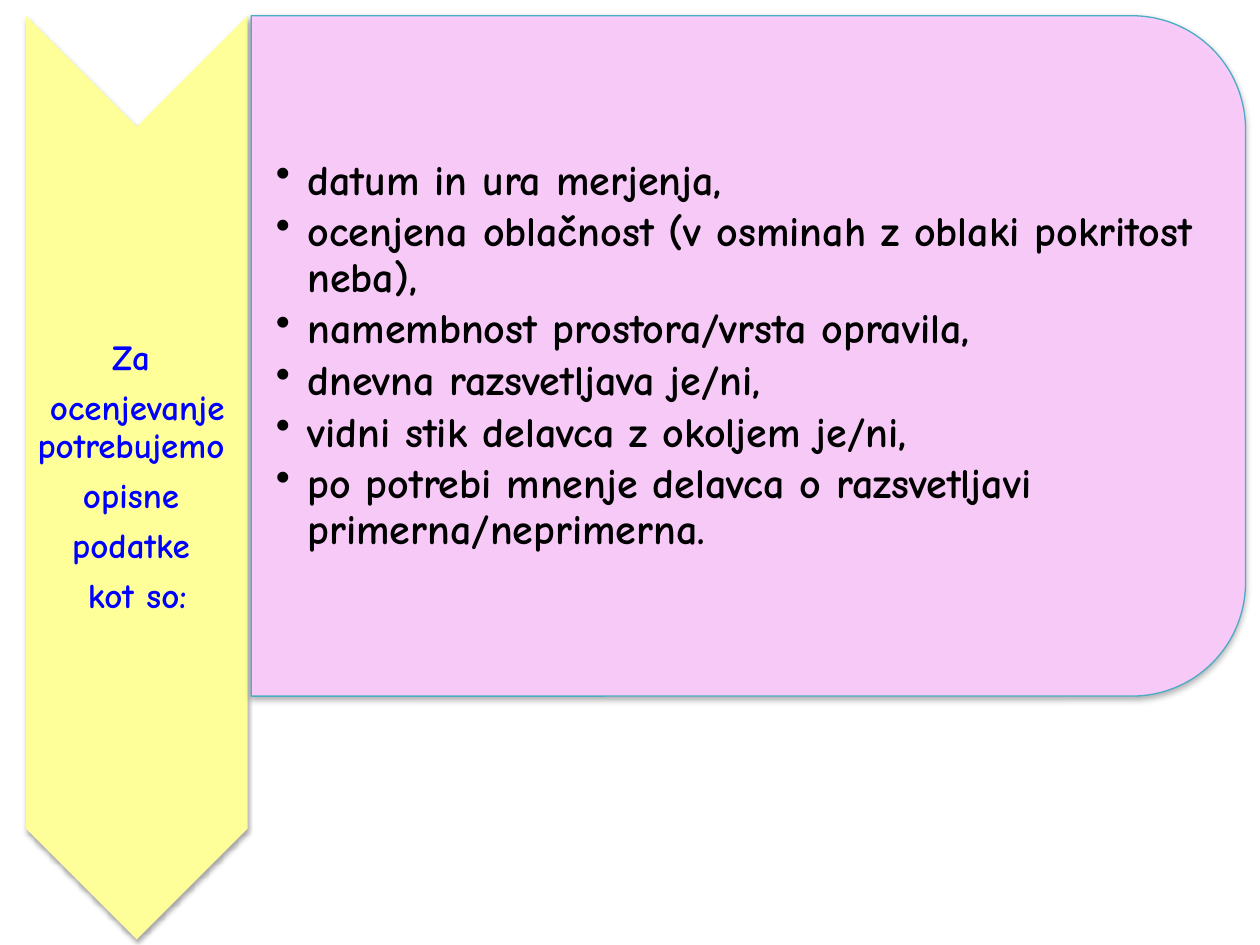
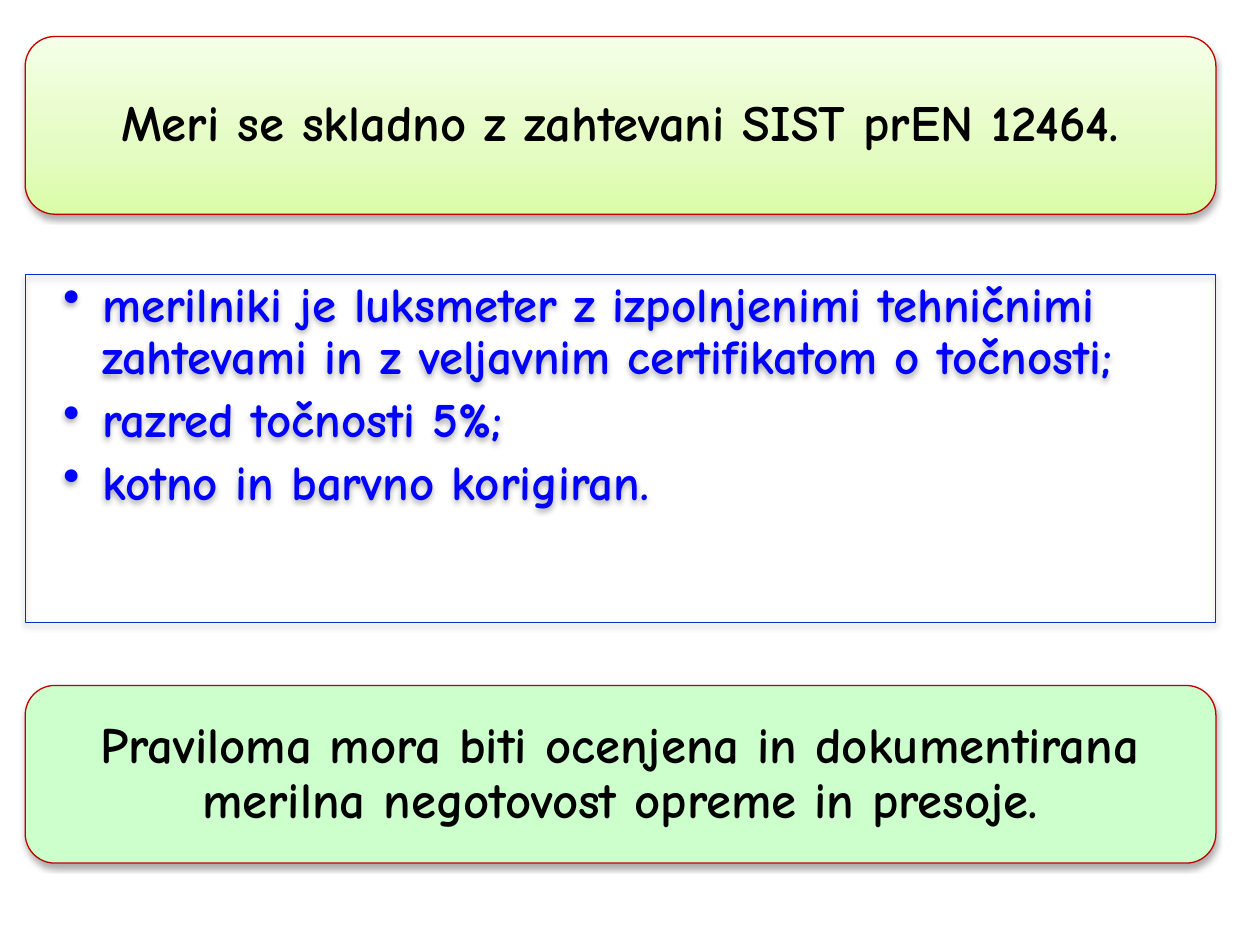
from pptx import Presentation, util as u
from pptx.dml.color import RGBColor
from pptx.enum import shapes, text
from pptx.oxml.ns import qn
from lxml import etree

PX = 9144  # 100 px to the inch
FONT = "Comic Neue"
HUES = {
    "black": "000000", "blue": "0000FF", "yellow": "FFFF99", "pink": "FFCCFF",
    "teal": "4BACC6", "navy": "0033CC", "red": "C00000", "mint": "CCFFCC",
}
LIME = [(0, "DAFDA7"), (35, "E4FCC2"), (100, "F5FFE7")]
KIND = shapes.MSO_SHAPE
MID, TOP = text.MSO_ANCHOR.MIDDLE, text.MSO_ANCHOR.TOP


def form(slide, kind, box, fill=None, line=None, turn=0, alpha=100, shade=(35, 3.1, 1.8)):
    """Draw a shape; a list as fill is an upward gradient, shade is alpha, blur, drop."""
    shape = slide.shapes.add_shape(kind, *[n * PX for n in box])
    shape.rotation = turn
    if fill is None:
        shape.fill.background()
    elif isinstance(fill, list):
        shape.fill.gradient()
        shape.fill.gradient_angle = 90
        stops = next(shape._element.spPr.iter(qn("a:gsLst")))
        for old in list(stops):
            stops.remove(old)
        for pos, hue in fill:
            stop = etree.SubElement(stops, qn("a:gs"), pos=str(pos * 1000))
            etree.SubElement(stop, qn("a:srgbClr"), val=hue)
    else:
        shape.fill.solid()
        shape.fill.fore_color.rgb = RGBColor.from_string(HUES[fill])
        if alpha < 100:
            tint = next(shape._element.spPr.iter(qn("a:srgbClr")))
            etree.SubElement(tint, qn("a:alpha"), val=str(alpha * 1000))
    if line:
        shape.line.color.rgb = RGBColor.from_string(HUES[line])
        shape.line.width = u.Pt(0.75)
    else:
        shape.line.fill.background()
    shape.shadow.inherit = False
    glow, blur, drop = shade
    cast = etree.SubElement(
        shape._element.spPr.find(qn("a:effectLst")), qn("a:outerShdw"),
        blurRad=str(u.Pt(blur)), dist=str(u.Pt(drop)), dir="5400000", rotWithShape="0")
    dark = etree.SubElement(cast, qn("a:srgbClr"), val=HUES["black"])
    etree.SubElement(dark, qn("a:alpha"), val=str(glow * 1000))
    return shape


def write(shape, lines, size, hue="black", after=0, pads=(0, 0, 0, 0), anchor=MID, dent=0):
    """Fill a shape with paragraphs; a dent makes them a bulleted list."""
    frame = shape.text_frame
    frame.word_wrap = True
    frame.vertical_anchor = anchor
    (frame.margin_left, frame.margin_top,
     frame.margin_right, frame.margin_bottom) = [n * PX for n in pads]
    for i, words in enumerate(lines):
        para = frame.paragraphs[0] if i == 0 else frame.add_paragraph()
        para.alignment = text.PP_ALIGN.LEFT if dent else text.PP_ALIGN.CENTER
        para.line_spacing = 0.9
        para.space_after = u.Pt(after)
        if dent:
            para.level = 1
            props = para._p.get_or_add_pPr()
            props.set("marL", str(dent * PX))
            props.set("indent", str(-dent * PX))
            etree.SubElement(props, qn("a:buChar"), char="•")
        run = para.add_run()
        run.text = words
        run.font.name, run.font.size, run.font.bold = FONT, u.Pt(size), True
        run.font.color.rgb = RGBColor.from_string(HUES[hue])


deck = Presentation()
deck.slide_width, deck.slide_height = 1000 * PX, 750 * PX
blank = deck.slide_layouts[6]

# Slide 1: arrow with lead-in, panel with list
data = deck.slides.add_slide(blank)
form(data, KIND.CHEVRON, (-258, 291, 733, 176), "yellow", turn=90)
lead = data.shapes.add_textbox(*[n * PX for n in (21, 101, 176, 557)])
write(lead, ["Za ", "ocenjevanje potrebujemo ", "opisne ", "podatke ", "kot so:"],
      20, "blue", after=7, pads=(1, 1, 1, 1))

form(data, KIND.ROUND_2_SAME_RECTANGLE, (324, -112, 540, 789), "pink", "teal",
     turn=90, alpha=90)
items = data.shapes.add_textbox(*[n * PX for n in (200, 39, 762, 487)])
write(items, [
    "datum in ura merjenja,",
    "ocenjena oblačnost (v osminah z oblaki pokritost neba),",
    "namembnost prostora/vrsta opravila,",
    "dnevna razsvetljava je/ni,",
    "vidni stik delavca z okoljem je/ni,",
    "po potrebi mnenje delavca o razsvetljavi primerna/neprimerna.",
], 24, after=3.6, pads=(19, 2, 2, 2), dent=25)

# Slide 2: two bands around a framed list
rules = deck.slides.add_slide(blank)
LEFT, WIDE, BAND = 20, 945, 141
SHADE = (32, 3.5, 2.2)
bands = [
    (29, LIME, "Meri se skladno z zahtevani SIST prEN 12464."),
    (544, "mint", "Praviloma mora biti ocenjena in dokumentirana merilna "
                  "negotovost opreme in presoje."),
]
for top, fill, words in bands:
    band = form(rules, KIND.ROUNDED_RECTANGLE, (LEFT, top, WIDE, BAND), fill, "red",
                shade=SHADE)
    write(band, [words], 29, pads=(12, 12, 12, 12))

meter = form(rules, KIND.RECTANGLE, (LEFT, 218, WIDE, 276), line="navy", shade=SHADE)
write(meter, [
    "merilniki je luksmeter z izpolnjenimi tehničnimi zahtevami in z veljavnim "
    "certifikatom o točnosti;",
    "razred točnosti 5%;",
    "kotno in barvno korigiran.",
], 28, "blue", after=5.6, pads=(30, 4, 22, 4), anchor=TOP, dent=31)

deck.save("out.pptx")
